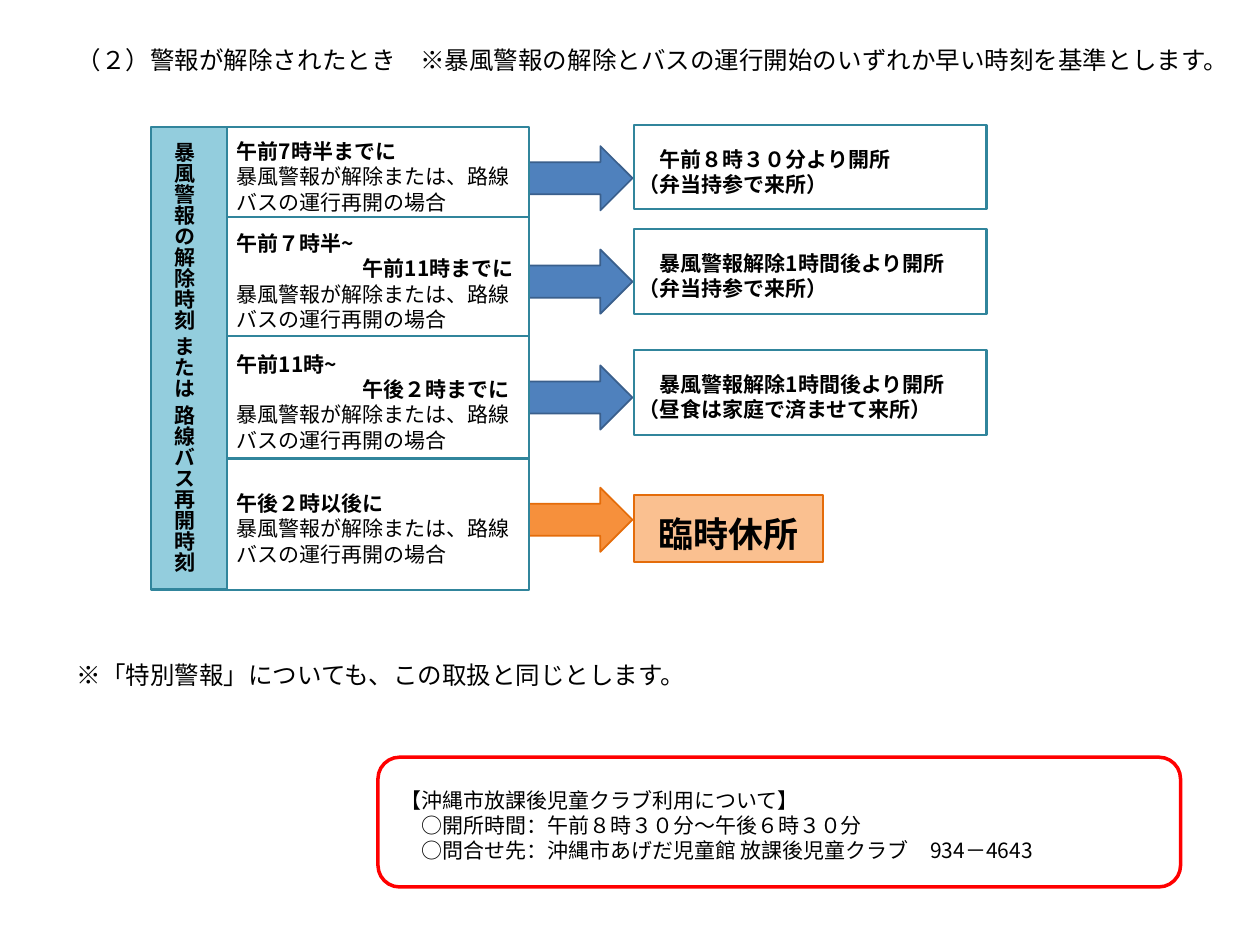
from dataclasses import dataclass

from pptx import Presentation
from pptx.dml.color import RGBColor
from pptx.enum.shapes import MSO_SHAPE as Preset
from pptx.enum.text import MSO_ANCHOR as Anchor, PP_ALIGN as Align
from pptx.oxml.ns import qn
from pptx.util import Inches, Pt


@dataclass(frozen=True)
class Theme:
    font: str = "Noto Sans CJK JP"
    ink: str = "000000"
    white: str = "FFFFFF"
    teal: str = "31859C"
    pale_teal: str = "93CDDD"
    blue: str = "4F81BD"
    dark_blue: str = "3A5F8C"
    orange: str = "F6903C"
    dark_orange: str = "E46C0A"
    pale_orange: str = "FAC090"
    red: str = "FF0000"
    body: float = 12
    heading: float = 14
    closure: float = 20


@dataclass(frozen=True)
class Line:
    text: str
    bold: bool = False
    indent: float = 0  # in points
    size: float = Theme.body


THEME = Theme()

# Grid in inches: column edges, row edges and result boxes
HEADER_X, CASE_X, CASE_END, RESULT_X = 1.2, 1.8, 4.2, 5.03
ROW_EDGES = [1.01, 1.72, 2.67, 3.64, 4.68]
RESULT_W, RESULT_H = 2.8, 0.67
ARROW_H = 0.51

CONDITION = "暴風警報が解除または、路線バスの運行再開の場合"
BRING_LUNCH = "（弁当持参で来所）"
ONE_HOUR_LATER = "暴風警報解除1時間後より開所"

# Period, end of period, result, note, result top, arrow top, arrow start
OPEN_CASES = [
    ("午前7時半までに", None, "午前８時３０分より開所", BRING_LUNCH, 0.99, 1.16, 4.07),
    ("午前７時半~", "午前11時までに", ONE_HOUR_LATER, BRING_LUNCH, 1.82, 1.98, 4.15),
    ("午前11時~", "午後２時までに", ONE_HOUR_LATER, "（昼食は家庭で済ませて来所）", 2.78, 2.9, 4.18),
]


def write(shape, lines, insets=(0.1, 0.05, 0.1, 0.05), align=Align.LEFT, anchor=Anchor.MIDDLE):
    frame = shape.text_frame
    left, top, right, bottom = map(Inches, insets)
    layout = {"word_wrap": True, "vertical_anchor": anchor, "margin_left": left,
              "margin_top": top, "margin_right": right, "margin_bottom": bottom}
    for name, value in layout.items():
        setattr(frame, name, value)
    for index, line in enumerate(lines):
        paragraph = frame.add_paragraph() if index else frame.paragraphs[0]
        paragraph.alignment = align
        if line.indent:
            paragraph._p.get_or_add_pPr().set("marL", str(Pt(line.indent)))
        run = paragraph.add_run()
        run.text = line.text
        for name, value in {"name": THEME.font, "size": Pt(line.size), "bold": line.bold}.items():
            setattr(run.font, name, value)
        run.font.color.rgb = RGBColor.from_string(THEME.ink)
        east_asian = run._r.get_or_add_rPr().makeelement(qn("a:ea"), {"typeface": THEME.font})
        run.font._element.find(qn("a:latin")).addnext(east_asian)


def add_block(slide, preset, area, fill, outline, weight=1.25):
    block = slide.shapes.add_shape(preset, *map(Inches, area))
    block.shadow.inherit = False
    if fill:
        block.fill.solid()
        block.fill.fore_color.rgb = RGBColor.from_string(fill)
    else:
        block.fill.background()
    block.line.color.rgb = RGBColor.from_string(outline)
    block.line.width = Pt(weight)
    return block


def add_note(slide, area, lines):
    write(slide.shapes.add_textbox(*map(Inches, area)), lines)


def add_arrow(slide, start, top, fill, outline):
    area = (start, top, RESULT_X - 0.01 - start, ARROW_H)
    add_block(slide, Preset.RIGHT_ARROW, area, fill, outline, 1)


def add_case(slide, row, period, period_end=None):
    """Condition box between two row edges."""
    top, bottom = ROW_EDGES[row:row + 2]
    lines = [Line(period, True)]
    if period_end:
        lines.append(Line(period_end, True, 6 * THEME.body))
    lines.append(Line(CONDITION))
    area = (CASE_X, top, CASE_END - CASE_X, bottom - top)
    case = add_block(slide, Preset.RECTANGLE, area, THEME.white, THEME.teal)
    write(case, lines, (0.08, 0.12, 0.04, 0.05))


def add_result(slide, area, lines, fill=None, outline=THEME.teal, align=Align.LEFT):
    result = add_block(slide, Preset.RECTANGLE, area, fill, outline)
    write(result, lines, (0.04, 0.12, 0.04, 0.05), align)


def add_vertical_header(slide):
    area = (HEADER_X, ROW_EDGES[0], CASE_X - HEADER_X, ROW_EDGES[-1] - ROW_EDGES[0])
    header = add_block(slide, Preset.RECTANGLE, area, THEME.pale_teal, THEME.teal)
    write(header, [Line("暴風警報の解除時刻 または 路線バス再開時刻", True)],
          (0.04, 0.12, 0.24, 0.05), Align.CENTER, Anchor.TOP)
    header.text_frame._txBody.bodyPr.set("vert", "eaVert")


def add_club_info(slide):
    add_block(slide, Preset.ROUNDED_RECTANGLE, (3, 6.01, 6.37, 1.03), None, THEME.red, 2)
    add_note(slide, (3.08, 6, 6.38, 1.1), [
        Line("【沖縄市放課後児童クラブ利用について】"),
        Line("○開所時間：午前８時３０分～午後６時３０分", indent=THEME.body),
        Line("○問合せ先：沖縄市あげだ児童館 放課後児童クラブ　934－4643", indent=THEME.body),
    ])


def main():
    deck = Presentation()
    deck.slide_width, deck.slide_height = Inches(10), Inches(7.5)
    slide = deck.slides.add_slide(deck.slide_layouts[6])

    add_note(slide, (0.51, 0.28, 9.45, 0.39), [Line(
        "（２）警報が解除されたとき　※暴風警報の解除とバスの運行開始のいずれか早い時刻を基準とします。",
        size=THEME.heading)])
    add_vertical_header(slide)

    for row, (period, period_end, opening, note, top, arrow_top, start) in enumerate(OPEN_CASES):
        add_arrow(slide, start, arrow_top, THEME.blue, THEME.dark_blue)
        add_case(slide, row, period, period_end)
        add_result(slide, (RESULT_X, top, RESULT_W, RESULT_H),
                   [Line(opening, True, THEME.body), Line(note, True)])

    add_arrow(slide, 3.85, 3.87, THEME.orange, THEME.dark_orange)
    add_case(slide, len(OPEN_CASES), "午後２時以後に")
    add_result(slide, (RESULT_X, 3.93, 1.5, 0.53),
               [Line("臨時休所", True, size=THEME.closure)],
               THEME.pale_orange, THEME.dark_orange, Align.CENTER)

    add_note(slide, (0.51, 5.16, 6.97, 0.39),
             [Line("※「特別警報」についても、この取扱と同じとします。", size=THEME.heading)])
    add_club_info(slide)
    deck.save("out.pptx")


if __name__ == "__main__":
    main()
